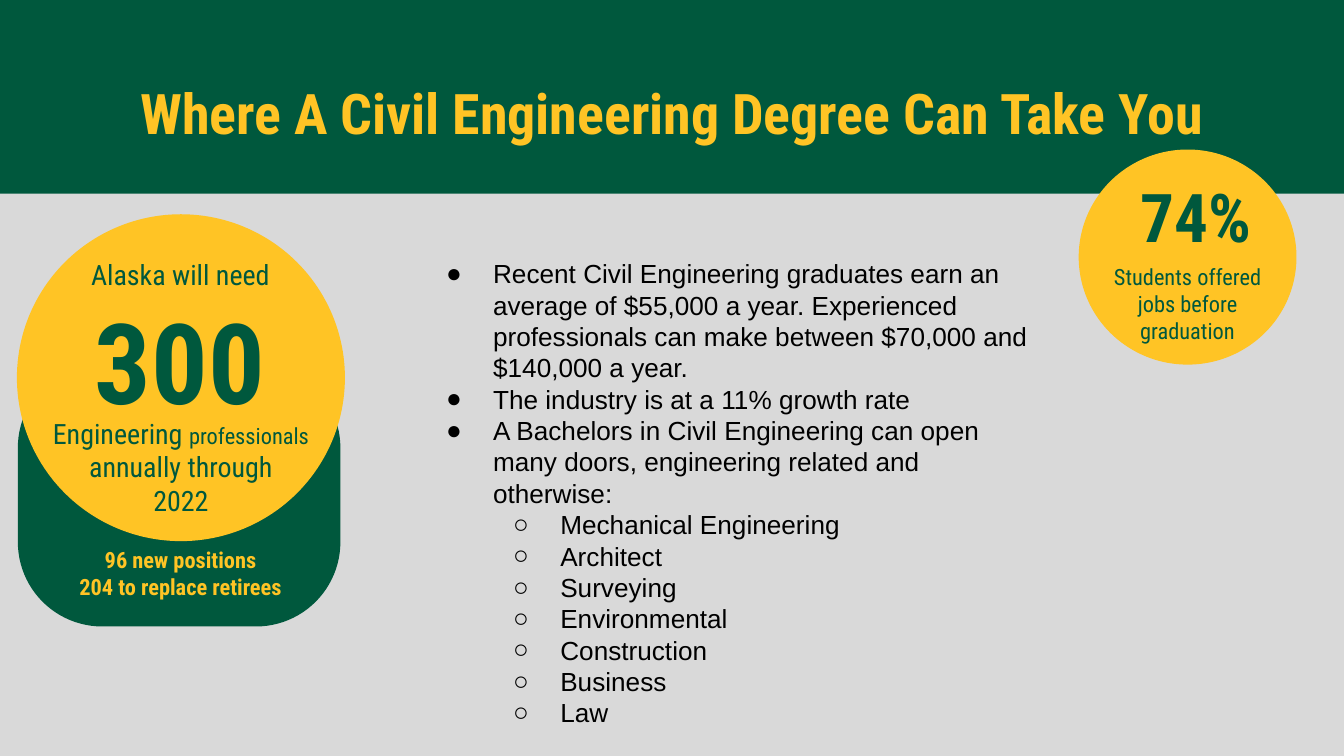
from lxml import etree
from pptx import Presentation
from pptx.dml.color import RGBColor
from pptx.enum.shapes import MSO_SHAPE
from pptx.enum.text import MSO_ANCHOR, PP_ALIGN
from pptx.oxml.ns import qn
from pptx.util import Cm, Pt

RECT, ROUND, OVAL = MSO_SHAPE.RECTANGLE, MSO_SHAPE.ROUNDED_RECTANGLE, MSO_SHAPE.OVAL
CENTER, LEFT, TOP = PP_ALIGN.CENTER, PP_ALIGN.LEFT, MSO_ANCHOR.TOP

COLORS = {"green": "00583D", "gold": "FFC425", "gray": "D9D9D9", "black": "000000"}
HEAD = "Roboto Condensed"
BODY = "Arial"
PAD = 0.25

FACTS = [
    (0, "Recent Civil Engineering graduates earn an average of $55,000 a year. "
        "Experienced professionals can make between $70,000 and $140,000 a year."),
    (0, "The industry is at a 11% growth rate"),
    (0, "A Bachelors in Civil Engineering can open many doors, "
        "engineering related and otherwise:"),
]
JOBS = ["Mechanical Engineering", "Architect", "Surveying", "Environmental",
        "Construction", "Business", "Law"]


def rgb(name):
    return RGBColor.from_string(COLORS[name])


def within(box, left, top, width, height):
    """Shift a part's box by the corner of its region."""
    return box[0] + left, box[1] + top, width, height


def add_form(slide, kind, box, color, line=0):
    form = slide.shapes.add_shape(kind, *map(Cm, box))
    form.shadow.inherit = False
    form.fill.solid()
    form.fill.fore_color.rgb = rgb(color)
    if line:
        form.line.color.rgb = rgb(color)
        form.line.width = Pt(line)
    else:
        form.line.fill.background()
    return form


def set_frame(frame, top=PAD):
    style = {"word_wrap": True, "vertical_anchor": TOP, "margin_top": Cm(top),
             "margin_left": Cm(PAD), "margin_right": Cm(PAD), "margin_bottom": Cm(PAD)}
    for key, value in style.items():
        setattr(frame, key, value)


def add_run(para, text, size, color, bold=False, name=HEAD):
    run = para.add_run()
    run.text = text
    style = {"name": name, "size": Pt(size), "bold": bold}
    for key, value in style.items():
        setattr(run.font, key, value)
    run.font.color.rgb = rgb(color)


def fill_text(frame, lines, color, bold=False):
    """Write centred lines, each a list of (text, size) runs."""
    for i, line in enumerate(lines):
        para = frame.add_paragraph() if i else frame.paragraphs[0]
        para.alignment = CENTER
        for text, size in line:
            add_run(para, text, size, color, bold)


def add_label(slide, box, lines, color, bold=False):
    frame = slide.shapes.add_textbox(*map(Cm, box)).text_frame
    set_frame(frame)
    fill_text(frame, lines, color, bold)


def set_bullet(para, level):
    props = para._p.get_or_add_pPr()
    props.set("marL", str(Cm(1.27 * (level + 1))))
    props.set("indent", str(Cm(-0.89)))
    tint = etree.SubElement(props, qn("a:buClr"))
    etree.SubElement(tint, qn("a:srgbClr")).set("val", COLORS["black"])
    etree.SubElement(props, qn("a:buFont")).set("typeface", BODY)
    etree.SubElement(props, qn("a:buChar")).set("char", "●○"[level])


def add_banner(slide, box):
    frame = add_form(slide, RECT, box, "green").text_frame
    set_frame(frame, top=1.49)
    fill_text(frame, [[("Where A Civil Engineering Degree Can Take You", 30)]],
              "gold", True)


def add_badge(slide, box):
    add_form(slide, OVAL, box, "gold", 0.75)
    add_label(slide, within(box, 0.73, 0.23, 2.95, 1.68), [[("74%", 36)]], "green", True)
    add_label(slide, within(box, 0, 1.88, box[2], 2.77),
              [[("Students offered jobs before graduation", 12)]], "green")


def add_demand(slide, box):
    card = add_form(slide, ROUND, within(box, 0.73, 2.23, 4.95, 6.07), "green", 0.75)
    card.rotation = 90
    card.adjustments[0] = 0.32
    add_form(slide, OVAL, within(box, 0.18, 0, 6.12, 6.1), "gold", 2.25)
    add_label(slide, within(box, 0.58, 5.99, 5.31, 2.11),
              [[("96 new positions", 12)], [("204 to replace retirees", 12)]],
              "gold", True)
    add_label(slide, within(box, 0.84, 0.53, 4.78, 1.27),
              [[("Alaska will need", 15)]], "green")
    add_label(slide, within(box, 0, 3.53, box[2], 2.26),
              [[("Engineering ", 15), ("professionals", 12), (" annually through", 15)],
               [("2022", 15)]], "green")
    add_label(slide, within(box, 0.96, 1.19, 4.52, 2.59), [[("300", 60)]], "green", True)


def add_facts(slide, box):
    frame = slide.shapes.add_textbox(*map(Cm, box)).text_frame
    set_frame(frame)
    for i, (level, text) in enumerate(FACTS + [(1, job) for job in JOBS]):
        para = frame.add_paragraph() if i else frame.paragraphs[0]
        set_bullet(para, level)
        style = {"level": level, "alignment": LEFT, "line_spacing": Pt(16.8)}
        for key, value in style.items():
            setattr(para, key, value)
        add_run(para, text, 14, "black", name=BODY)


def main():
    deck = Presentation()
    deck.slide_width, deck.slide_height = Cm(25.4), Cm(14.29)
    slide = deck.slides.add_slide(deck.slide_layouts[6])
    slide.background.fill.solid()
    slide.background.fill.fore_color.rgb = rgb("gray")
    add_banner(slide, (0, 0, 25.4, 3.66))
    add_badge(slide, (20.4, 2.84, 4.09, 4.04))
    add_demand(slide, (0.18, 4.09, 6.48, 7.77))
    add_facts(slide, (7.8, 4.62, 12.17, 7.98))
    deck.save("out.pptx")


if __name__ == "__main__":
    main()
